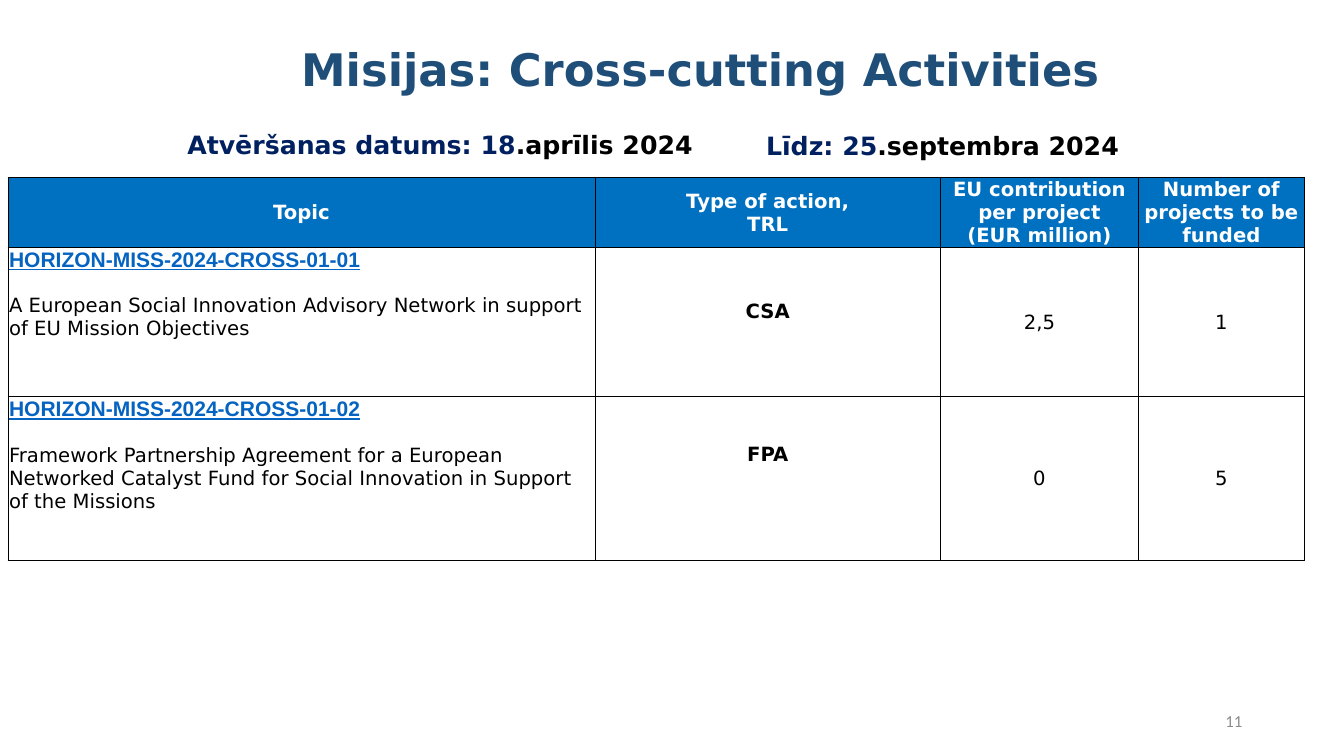
from lxml.etree import SubElement
from pptx import Presentation
from pptx.dml.color import RGBColor
from pptx.enum.text import MSO_ANCHOR, MSO_AUTO_SIZE, PP_ALIGN
from pptx.oxml.ns import qn
from pptx.util import Inches, Pt

COLORS = {"title": "1F4E79", "navy": "002060", "header": "0070C0", "link": "0563C1",
          "black": "000000", "white": "FFFFFF", "gray": "8C8C8C"}
FONT = "DejaVu Sans"
TITLE = "Misijas: Cross-cutting Activities"
PAGE_NUMBER = "11"
DATES = [
    ((1.76, 1.23, 6.64, 0.41), "Atvēršanas datums: 18", ".aprīlis 2024"),
    ((7.5, 1.24, 4.8, 0.4), "Līdz: 25", ".septembra 2024"),
]
HEADERS = [
    ["Topic"],
    ["Type of action,", "TRL"],
    ["EU contribution per project", "(EUR million)"],
    ["Number of projects to be funded"],
]
TOPICS = [
    {"code": "HORIZON-MISS-2024-CROSS-01-01",
     "name": "A European Social Innovation Advisory Network in support of EU Mission Objectives",
     "action": "CSA", "action_bottom": 0.22, "budget": "2,5", "projects": "1"},
    {"code": "HORIZON-MISS-2024-CROSS-01-02",
     "name": "Framework Partnership Agreement for a European Networked Catalyst Fund "
             "for Social Innovation in Support of the Missions",
     "action": "FPA", "action_bottom": 0.47, "budget": "0", "projects": "5"},
]
TABLE_LEFT, TABLE_TOP = 0.08, 1.76
COLUMN_WIDTHS = [5.82, 3.43, 1.96, 1.65]
ROW_HEIGHTS = [0.69, 1.48, 1.62]


def style(font, size, color, bold=False, name=FONT):
    font.size, font.bold, font.name = Pt(size), bold, name
    font.color.rgb = RGBColor.from_string(COLORS[color])


def add_box(page, place):
    box = page.shapes.add_textbox(*map(Inches, place))
    box.text_frame.word_wrap = True
    return box.text_frame


def add_borders(cell):
    properties = cell._tc.get_or_add_tcPr()
    for side in ("a:lnL", "a:lnR", "a:lnT", "a:lnB"):
        line = SubElement(properties, qn(side), w=str(Pt(0.5)))
        SubElement(SubElement(line, qn("a:solidFill")), qn("a:srgbClr"), val=COLORS["black"])


def fill_cell(cell, lines, color="black", bold=False, fill="white", bottom=0):
    add_borders(cell)
    cell.fill.solid()
    cell.fill.fore_color.rgb = RGBColor.from_string(COLORS[fill])
    cell.margin_left = cell.margin_right = cell.margin_top = Inches(0.01)
    cell.margin_bottom = Inches(bottom)
    cell.vertical_anchor = MSO_ANCHOR.MIDDLE
    cell.text_frame.text = "\n".join(lines)
    for para in cell.text_frame.paragraphs:
        para.alignment = PP_ALIGN.CENTER
        style(para.font, 14, color, bold)


def fill_topic(cell, topic):
    fill_cell(cell, [topic["code"], topic["name"]])
    cell.vertical_anchor = MSO_ANCHOR.TOP
    code, name = cell.text_frame.paragraphs
    code.alignment = name.alignment = PP_ALIGN.LEFT
    style(code.font, 15, "link", True, "Arial")
    code.font.underline = True
    name.space_before = Pt(16.3)


def add_topics_table(page):
    table = page.shapes.add_table(
        len(ROW_HEIGHTS), len(COLUMN_WIDTHS), Inches(TABLE_LEFT), Inches(TABLE_TOP),
        Inches(sum(COLUMN_WIDTHS)), Inches(sum(ROW_HEIGHTS))).table
    for column, width in zip(table.columns, COLUMN_WIDTHS):
        column.width = Inches(width)
    for row, height in zip(table.rows, ROW_HEIGHTS):
        row.height = Inches(height)
    for cell, lines in zip(table.rows[0].cells, HEADERS):
        fill_cell(cell, lines, "white", True, "header")
    for index, topic in enumerate(TOPICS, 1):
        fill_topic(table.cell(index, 0), topic)
        fill_cell(table.cell(index, 1), [topic["action"]], bold=True,
                  bottom=topic["action_bottom"])
        fill_cell(table.cell(index, 2), [topic["budget"]])
        fill_cell(table.cell(index, 3), [topic["projects"]])


def main():
    deck = Presentation()
    deck.slide_width, deck.slide_height = Inches(13.33), Inches(7.5)
    page = deck.slides.add_slide(deck.slide_layouts[5])

    title = page.shapes.title
    title.left, title.top, title.width, title.height = map(Inches, (1.2, -0.01, 11.5, 1.45))
    title.text_frame.text = TITLE
    title.text_frame.auto_size = MSO_AUTO_SIZE.NONE
    title.text_frame.vertical_anchor = MSO_ANCHOR.MIDDLE
    para = title.text_frame.paragraphs[0]
    para.alignment, para.line_spacing = PP_ALIGN.CENTER, 0.9
    style(para.font, 32, "title", True)

    add_topics_table(page)

    for place, label, date in DATES:
        para = add_box(page, place).paragraphs[0]
        for text, color in ((label, "navy"), (date, "black")):
            span = para.add_run()
            span.text = text
            style(span.font, 18, color, True)

    number = add_box(page, (9.42, 6.95, 3, 0.4))
    number.vertical_anchor = MSO_ANCHOR.MIDDLE
    number.text = PAGE_NUMBER
    para = number.paragraphs[0]
    para.alignment = PP_ALIGN.RIGHT
    style(para.font, 12, "gray", name="Calibri")

    deck.save("out.pptx")


if __name__ == "__main__":
    main()
